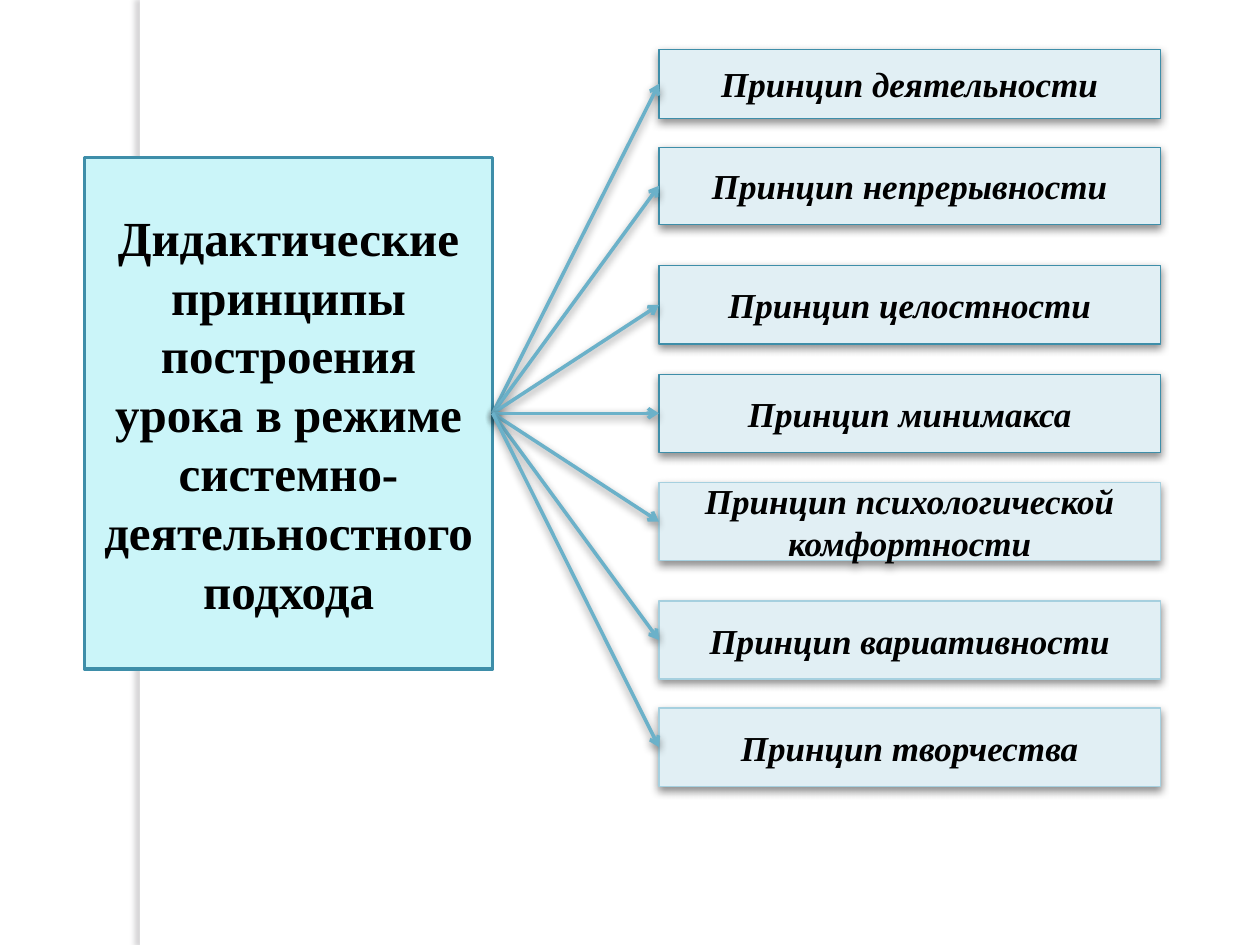
from lxml.etree import SubElement
from pptx import Presentation
from pptx.dml.color import RGBColor
from pptx.enum.shapes import MSO_CONNECTOR as Connector, MSO_SHAPE as Shape
from pptx.enum.text import MSO_ANCHOR as Anchor, PP_ALIGN as Align
from pptx.oxml.ns import qn
from pptx.util import Inches, Pt

COLUMNS, ROWS = 100, 75
RIGHT_SIDE, LEFT_SIDE = 3, 1


def color(hex_value):
    return RGBColor.from_string(hex_value)


class Diagram:
    """Holds the style and the current slide; lengths are grid columns and rows."""
    font = "Times New Roman"
    text_color = "000000"
    dark_line, pale_line, arrow_line = "3E8EA9", "A6D0DF", "6BB1C9"
    soft_shadow = ("000000", 43, 5, 2, 90)
    stripe_shadow = ("646068", 25, 3, 3, 180)

    def __init__(self, presentation):
        self.slide = presentation.slides.add_slide(presentation.slide_layouts[6])
        self.column = presentation.slide_width / COLUMNS
        self.row = presentation.slide_height / ROWS

    def shadow(self, properties, hex_value, opacity, blur, distance, angle):
        effects = properties.find(qn("a:effectLst"))
        if effects is None:
            effects = SubElement(properties, qn("a:effectLst"))
        outer = SubElement(effects, qn("a:outerShdw"), blurRad=str(Pt(blur)),
                           dist=str(Pt(distance)), dir=str(angle * 60000),
                           algn="ctr", rotWithShape="0")
        tint = SubElement(outer, qn("a:srgbClr"), val=hex_value)
        SubElement(tint, qn("a:alpha"), val=str(opacity * 1000))

    def box(self, left, top, width, height, fill, line=None, weight=0.75, shadow=None):
        shape = self.slide.shapes.add_shape(
            Shape.RECTANGLE, round(left * self.column), round(top * self.row),
            round(width * self.column), round(height * self.row))
        shape.fill.solid()
        shape.fill.fore_color.rgb = color(fill)
        if line:
            shape.line.color.rgb = color(line)
            shape.line.width = Pt(weight)
        else:
            shape.line.fill.background()
        shape.shadow.inherit = False
        if shadow:
            self.shadow(shape.element.spPr, *shadow)
        return shape

    def text(self, shape, words, size, italic=False):
        frame = shape.text_frame
        frame.word_wrap = True
        frame.vertical_anchor = Anchor.MIDDLE
        paragraph = frame.paragraphs[0]
        paragraph.alignment = Align.CENTER
        run = paragraph.add_run()
        run.text = words
        run.font.name = self.font
        run.font.size = Pt(size)
        run.font.bold = True
        run.font.italic = italic
        run.font.color.rgb = color(self.text_color)

    def arrow(self, start, end):
        connector = self.slide.shapes.add_connector(Connector.STRAIGHT, 0, 0, 0, 0)
        connector.begin_connect(start, RIGHT_SIDE)
        connector.end_connect(end, LEFT_SIDE)
        connector.line.color.rgb = color(self.arrow_line)
        connector.line.width = Pt(2)
        properties = connector.element.spPr
        SubElement(properties.find(qn("a:ln")), qn("a:tailEnd"), type="arrow")
        self.shadow(properties, *self.soft_shadow)


def main():
    presentation = Presentation()
    presentation.slide_width = Inches(10)
    presentation.slide_height = Inches(7.5)
    diagram = Diagram(presentation)

    # Background stripe
    diagram.box(11.1, 0, 0.8, ROWS, "FFFFFF", shadow=diagram.stripe_shadow)

    # Topic
    topic = diagram.box(6.7, 12.5, 32.4, 40.6, "CBF5F9", diagram.dark_line, 2)
    diagram.text(topic, "Дидактические принципы построения урока в режиме "
                        "системно-деятельностного подхода", 28)

    # Principles: name, top, height, outline
    dark, pale = diagram.dark_line, diagram.pale_line
    principles = [
        ("деятельности", 3.9, 5.5, dark),
        ("непрерывности", 11.7, 6.1, dark),
        ("целостности", 21.1, 6.2, dark),
        ("минимакса", 29.7, 6.2, dark),
        ("психологической комфортности", 38.3, 6.2, pale),
        ("вариативности", 47.7, 6.2, pale),
        ("творчества", 56.2, 6.2, pale),
    ]
    boxes = []
    for name, top, height, line in principles:
        principle = diagram.box(52.3, top, 39.8, height, "E1EFF4", line,
                                shadow=diagram.soft_shadow)
        diagram.text(principle, f"Принцип {name}", 20, italic=True)
        boxes.append(principle)

    # Arrows from the topic to each principle
    for principle in boxes:
        diagram.arrow(topic, principle)

    presentation.save("out.pptx")


if __name__ == "__main__":
    main()
